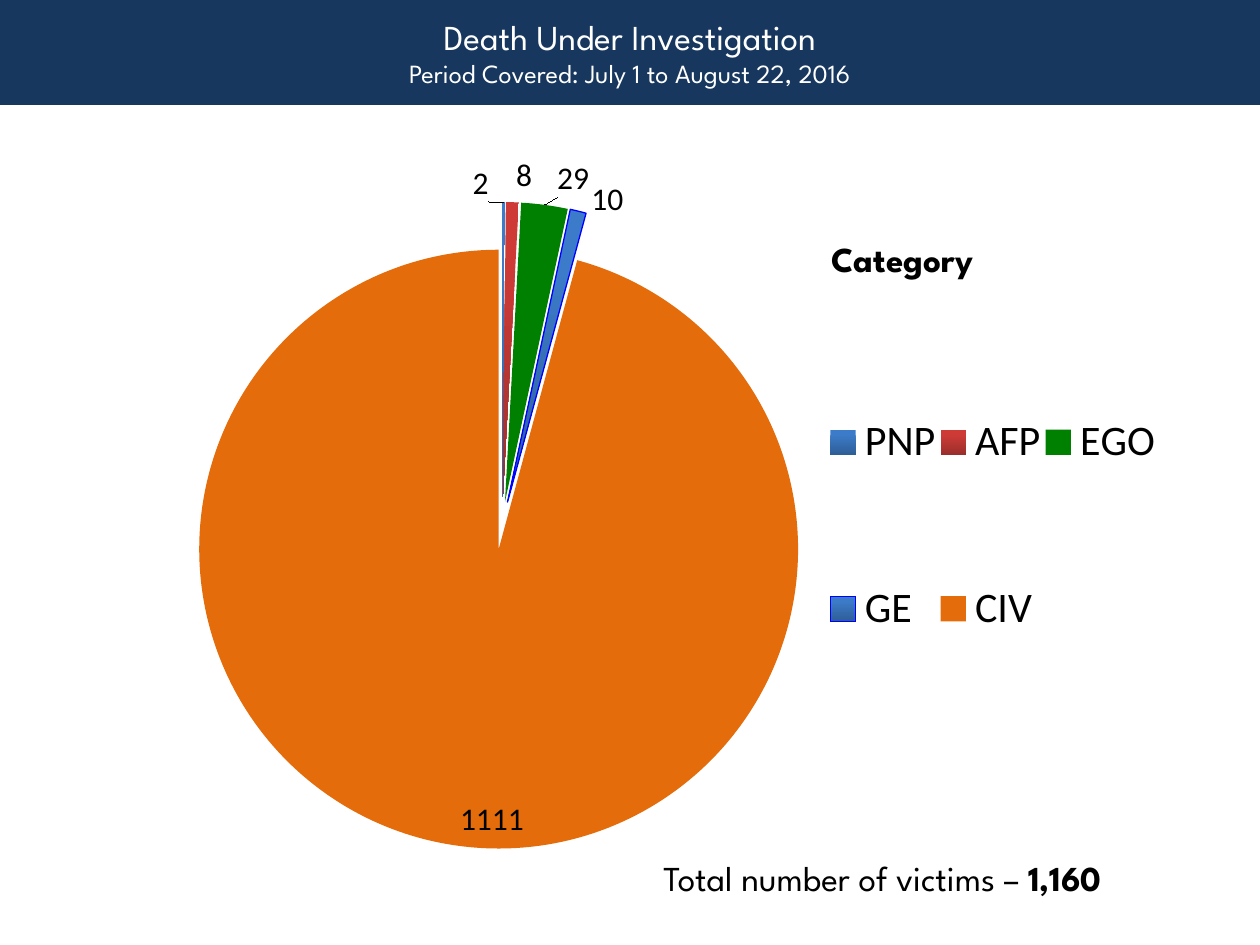
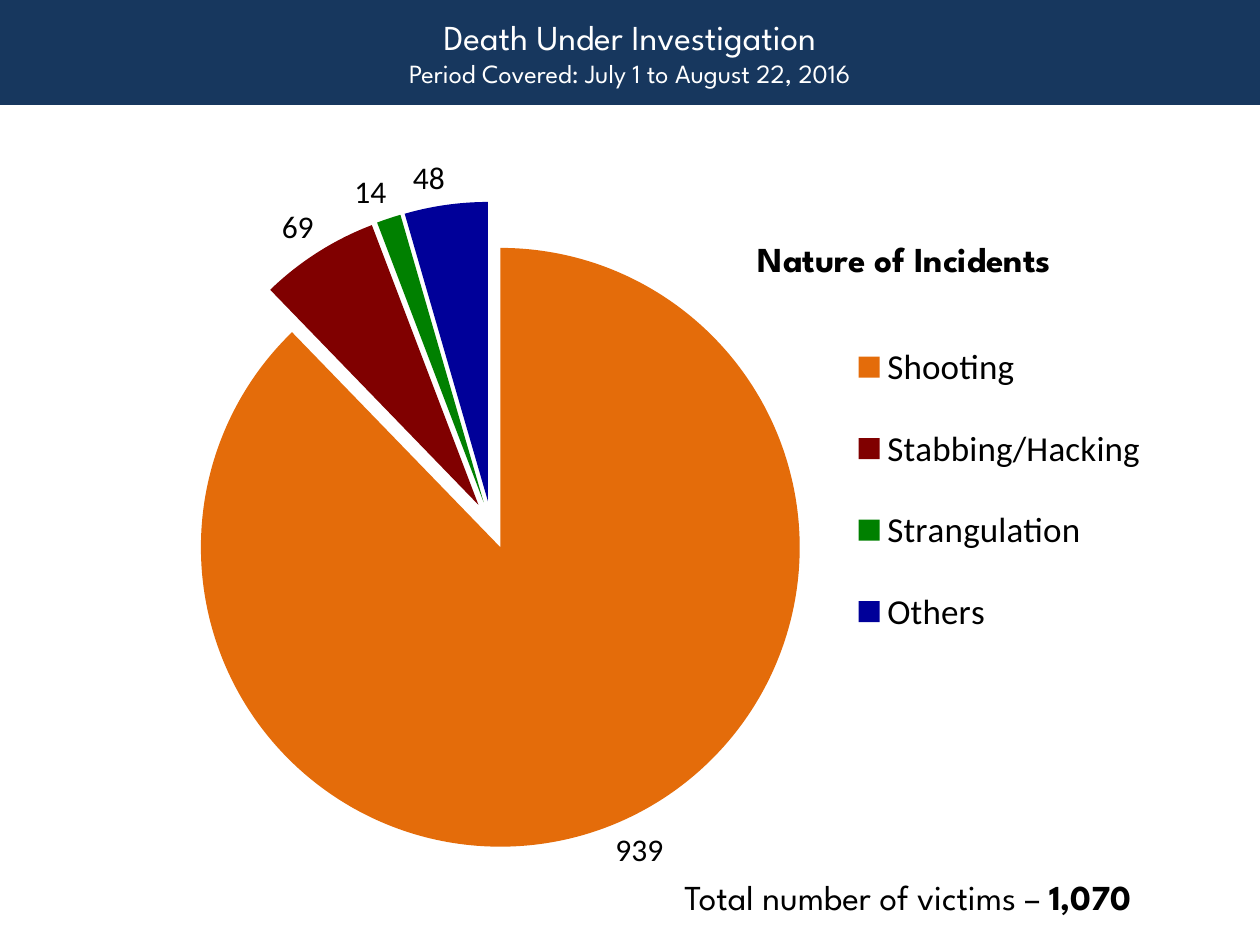
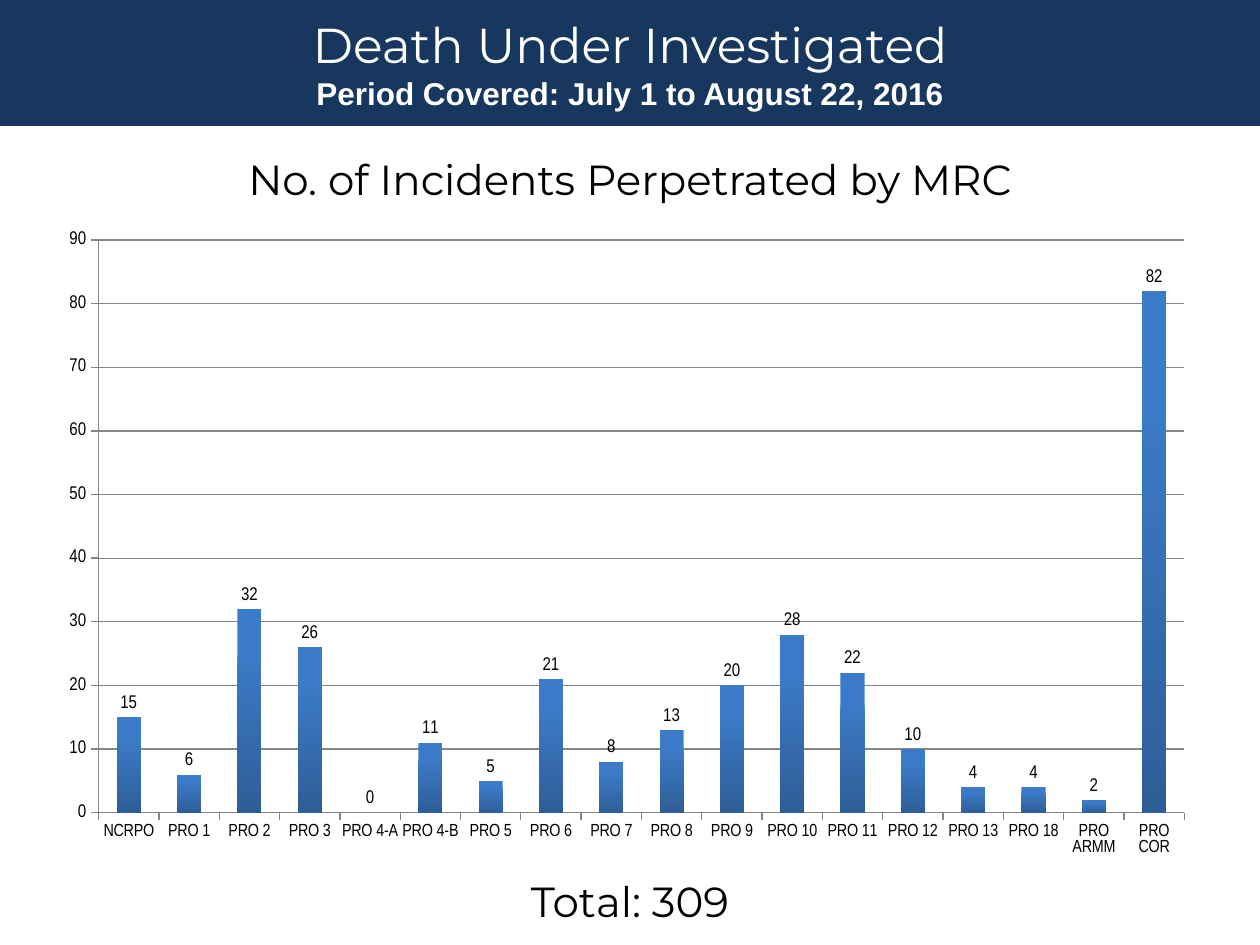
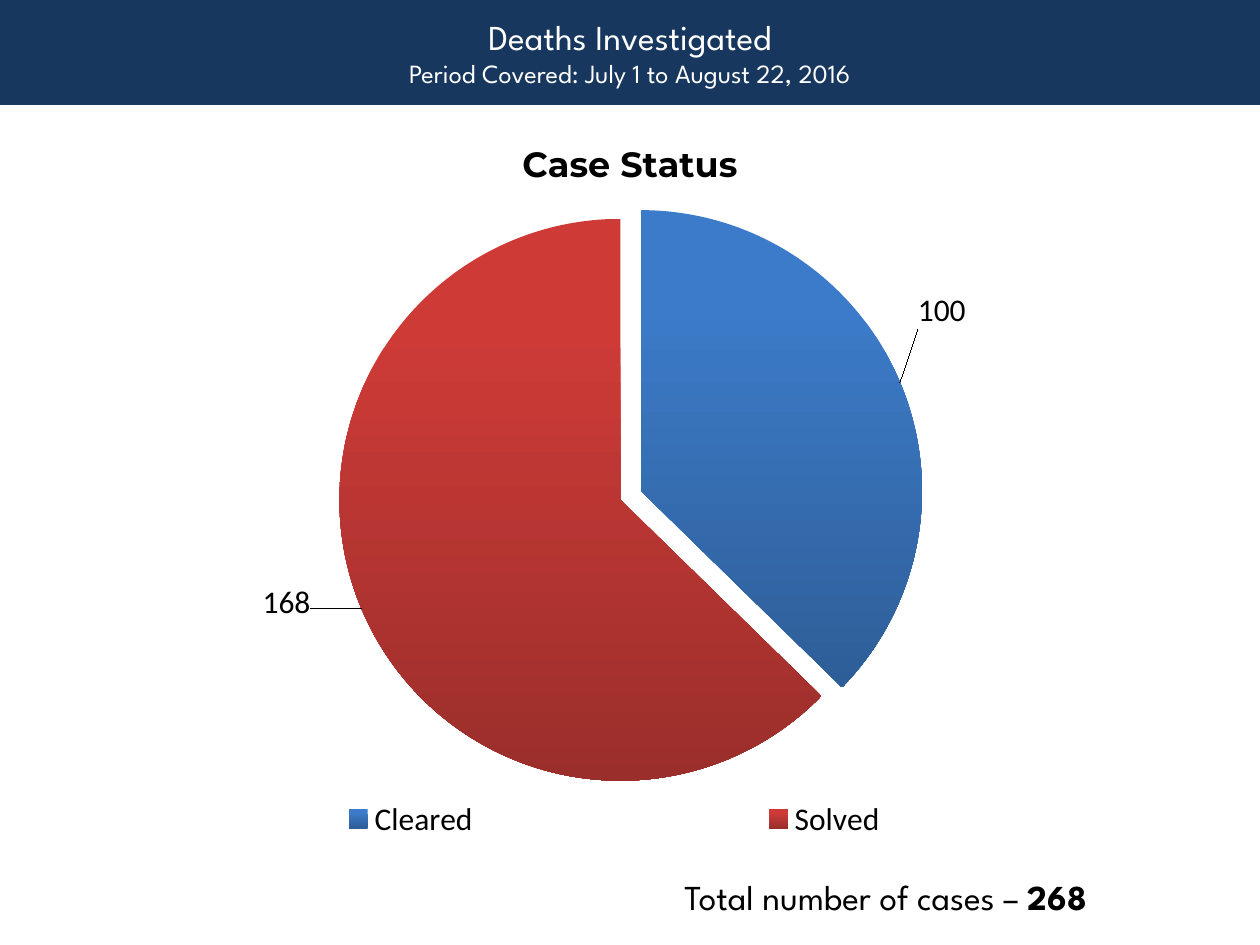
from dataclasses import dataclass
from typing import NamedTuple

from lxml import etree
from pptx import Presentation
from pptx.chart.data import CategoryChartData
from pptx.dml.color import RGBColor
from pptx.enum.chart import XL_CHART_TYPE, XL_LABEL_POSITION, XL_LEGEND_POSITION, XL_TICK_MARK
from pptx.enum.text import MSO_ANCHOR, MSO_AUTO_SIZE, PP_ALIGN
from pptx.oxml.ns import qn
from pptx.util import Inches, Pt

PIE, COLUMN = XL_CHART_TYPE.PIE, XL_CHART_TYPE.COLUMN_CLUSTERED
OUTSIDE, INSIDE = XL_LABEL_POSITION.OUTSIDE_END, XL_LABEL_POSITION.INSIDE_END
LEGEND_RIGHT = XL_LEGEND_POSITION.RIGHT
TICK_OUT = XL_TICK_MARK.OUTSIDE
LEFT, CENTER = PP_ALIGN.LEFT, PP_ALIGN.CENTER
MIDDLE = MSO_ANCHOR.MIDDLE
FIXED, GROW = MSO_AUTO_SIZE.NONE, MSO_AUTO_SIZE.SHAPE_TO_FIT_TEXT

NAVY = RGBColor(0x17, 0x37, 0x5E)
WHITE = RGBColor(0xFF, 0xFF, 0xFF)
BLACK = RGBColor(0x00, 0x00, 0x00)
GRAY = RGBColor(0x86, 0x86, 0x86)
ORANGE = RGBColor(0xE4, 0x6C, 0x0A)
GREEN = RGBColor(0x00, 0x80, 0x00)
MAROON = RGBColor(0x80, 0x00, 0x00)
INDIGO = RGBColor(0x00, 0x00, 0x99)
BRIGHT_BLUE = RGBColor(0x00, 0x00, 0xFF)

SPARTAN, MONTSERRAT = "League Spartan", "Montserrat"
ARIAL, NARROW, CALIBRI = "Arial", "Arial Narrow", "Calibri"
PERIOD = "Period Covered: July 1 to August 22, 2016"
SLIDE_WIDTH, SLIDE_HEIGHT = Inches(10), Inches(7.5)
COLUMNS, ROWS = 120, 90


class Area(NamedTuple):
    """A place on the slide grid."""

    column: float
    row: float
    columns: float
    rows: float


class Frame(NamedTuple):
    """Shares of a chart taken by one of its parts."""

    x: float
    y: float
    w: float
    h: float


class Shift(NamedTuple):
    """Shares of a chart by which a label moves."""

    x: float
    y: float


class Gradient(NamedTuple):
    """A fill running from light at the top to dark at the bottom."""

    light: RGBColor
    dark: RGBColor


BLUE_SHADE = Gradient(RGBColor(0x3C, 0x7B, 0xC9), RGBColor(0x2E, 0x5E, 0x97))
RED_SHADE = Gradient(RGBColor(0xCE, 0x3B, 0x37), RGBColor(0x9A, 0x2E, 0x2B))


@dataclass(frozen=True)
class Span:
    """A stretch of text in one format."""

    text: str
    size: float = 20
    font: str = SPARTAN
    bold: bool = False
    color: RGBColor = BLACK


@dataclass(frozen=True)
class Caption:
    """A one-line text box."""

    area: Area
    spans: tuple[Span, ...]
    align: PP_ALIGN = LEFT


@dataclass(frozen=True)
class Slice:
    """A pie slice with its value, look and label place."""

    label: str
    value: int
    fill: RGBColor | Gradient
    shift: Shift | None = None
    outline: RGBColor | None = None
    position: XL_LABEL_POSITION = OUTSIDE


@dataclass(frozen=True)
class Pie:
    """A pie chart with a placed plot and legend."""

    area: Area
    plot: Frame
    legend: Frame
    legend_size: int
    explosion: int
    slices: tuple[Slice, ...]


@dataclass(frozen=True)
class Bars:
    """A column chart with a value above each column."""

    area: Area
    plot: Frame
    values: dict[str, int]


@dataclass(frozen=True)
class Page:
    """A slide with a title band, a chart and captions."""

    band_rows: float
    title: tuple[Span, Span]
    chart: Pie | Bars
    captions: tuple[Caption, ...]


def set_format(target, **values) -> None:
    """Set each named value on the target."""
    for name, value in values.items():
        setattr(target, name, value)


def place(area: Area) -> tuple[int, int, int, int]:
    """Turn a grid area into slide lengths."""
    return (
        int(SLIDE_WIDTH * area.column / COLUMNS),
        int(SLIDE_HEIGHT * area.row / ROWS),
        int(SLIDE_WIDTH * area.columns / COLUMNS),
        int(SLIDE_HEIGHT * area.rows / ROWS),
    )


def add_span(para, span: Span) -> None:
    """Add one formatted run to a paragraph."""
    run = para.add_run()
    run.text = span.text
    set_format(run.font, name=span.font, size=Pt(span.size), bold=span.bold)
    run.font.color.rgb = span.color


def add_band(slide, rows: float, lines: tuple[Span, Span]) -> None:
    """Turn the title placeholder into the band at the top."""
    title = slide.shapes.title
    left, top, width, height = place(Area(0, 0, COLUMNS, rows))
    set_format(title, left=left, top=top, width=width, height=height)
    title.fill.solid()
    title.fill.fore_color.rgb = NAVY
    frame = title.text_frame
    set_format(frame, word_wrap=True, auto_size=FIXED, vertical_anchor=MIDDLE)
    for index, line in enumerate(lines):
        para = frame.add_paragraph() if index else frame.paragraphs[0]
        para.alignment = CENTER
        add_span(para, line)


def add_caption(slide, caption: Caption) -> None:
    """Draw a caption as a text box."""
    box = slide.shapes.add_textbox(*place(caption.area))
    set_format(box.text_frame, word_wrap=True, auto_size=GROW)
    para = box.text_frame.paragraphs[0]
    para.alignment = caption.align
    for span in caption.spans:
        add_span(para, span)


def paint(fill, paint_with: RGBColor | Gradient) -> None:
    """Fill with a plain colour or a vertical gradient."""
    if isinstance(paint_with, Gradient):
        fill.gradient()
        fill.gradient_angle = 270
        for stop, color, position in zip(fill.gradient_stops, paint_with, (0.2, 1)):
            stop.color.rgb = color
            stop.position = position
    else:
        fill.solid()
        fill.fore_color.rgb = paint_with


def make_layout(part: Frame | Shift, inner: bool = False):
    """Build the manual layout of a chart part."""
    layout = etree.Element(qn("c:layout"))
    manual = etree.SubElement(layout, qn("c:manualLayout"))
    settings = {"layoutTarget": "inner"} if inner else {}
    if isinstance(part, Frame):
        settings |= {"xMode": "edge", "yMode": "edge"}
    for name, value in (settings | part._asdict()).items():
        etree.SubElement(manual, qn(f"c:{name}"), val=str(value))
    return layout


def add_chart(slide, kind, area: Area, plot: Frame, values: dict[str, int], font: str, size: float):
    """Add a one-series chart with its plot area in place."""
    data = CategoryChartData()
    data.categories = list(values)
    data.add_series("Series 1", list(values.values()))
    chart = slide.shapes.add_chart(kind, *place(area), data).chart
    set_format(chart, has_title=False, has_legend=False)
    set_format(chart.font, name=font, size=Pt(size))
    chart.font.color.rgb = BLACK
    plot_area = chart._chartSpace.chart.plotArea
    for old_layout in plot_area.findall(qn("c:layout")):
        plot_area.remove(old_layout)
    plot_area.insert(0, make_layout(plot, inner=True))
    labels = chart.plots[0].series[0].data_labels
    set_format(labels, show_value=True, position=OUTSIDE)
    set_format(labels.font, name=font, size=Pt(size))
    return chart


def add_legend(chart, frame: Frame, size: int) -> None:
    """Show the legend in its frame."""
    chart.has_legend = True
    legend = chart.legend
    set_format(legend, position=LEGEND_RIGHT, include_in_layout=False)
    set_format(legend.font, name=CALIBRI, size=Pt(size))
    element = legend._element
    for old_layout in element.findall(qn("c:layout")):
        element.remove(old_layout)
    element.find(qn("c:legendPos")).addnext(make_layout(frame))


def add_pie(slide, pie: Pie) -> None:
    """Draw an exploded pie chart."""
    values = {part.label: part.value for part in pie.slices}
    chart = add_chart(slide, PIE, pie.area, pie.plot, values, CALIBRI, 18)
    add_legend(chart, pie.legend, pie.legend_size)
    chart.plots[0].vary_by_categories = True
    series = chart.plots[0].series[0]
    explosion = etree.Element(qn("c:explosion"), val=str(pie.explosion))
    series._element.find(qn("c:tx")).addnext(explosion)
    for index, part in enumerate(pie.slices):
        point = series.points[index]
        paint(point.format.fill, part.fill)
        if part.outline is not None:
            point.format.line.color.rgb = part.outline
            point.format.line.width = Pt(0.75)
        else:
            point.format.line.fill.background()
        if part.shift is not None or part.position != OUTSIDE:
            label = point.data_label
            label.position = part.position
            set_format(label.font, name=CALIBRI, size=Pt(18))
            if part.shift is not None:
                label._get_or_add_dLbl()[0].addnext(make_layout(part.shift))


def add_bars(slide, bars: Bars) -> None:
    """Draw a column chart with gridlines."""
    chart = add_chart(slide, COLUMN, bars.area, bars.plot, bars.values, NARROW, 10.5)
    plot = chart.plots[0]
    set_format(plot, vary_by_categories=False, gap_width=150)
    paint(plot.series[0].format.fill, BLUE_SHADE)
    set_format(chart.value_axis, minimum_scale=0, maximum_scale=90, major_unit=10, has_major_gridlines=True)
    chart.value_axis.major_gridlines.format.line.color.rgb = GRAY
    for axis, size in ((chart.category_axis, 10), (chart.value_axis, 10.5)):
        axis.major_tick_mark = TICK_OUT
        axis.format.line.color.rgb = GRAY
        set_format(axis.tick_labels.font, name=NARROW, size=Pt(size))


def spartan_title(text: str) -> tuple[Span, Span]:
    """Give the two band lines used with pie charts."""
    return Span(text, color=WHITE), Span(PERIOD, 15, color=WHITE)


def total(column: float, row: float, columns: float, counted: str, amount: str) -> Caption:
    """Give the closing line with its total in bold."""
    return Caption(
        Area(column, row, columns, 5.3),
        (Span(f"Total number of {counted} – "), Span(amount, bold=True)),
    )


def wide_line(row: float, rows: float, span: Span) -> Caption:
    """Give a centred line as wide as the slide."""
    return Caption(Area(0, row, COLUMNS, rows), (span,), CENTER)


INCIDENTS = {
    "NCRPO": 15, "PRO 1": 6, "PRO 2": 32, "PRO 3": 26, "PRO 4-A": 0, "PRO 4-B": 11,
    "PRO 5": 5, "PRO 6": 21, "PRO 7": 8, "PRO 8": 13, "PRO 9": 20, "PRO 10": 28,
    "PRO 11": 22, "PRO 12": 10, "PRO 13": 4, "PRO 18": 4, "PRO ARMM": 2, "PRO COR": 82,
}

CATEGORY_PIE = Pie(
    Area(6, 14, 110, 70), Frame(0.1, 0.03, 0.56, 0.97), Frame(0.66, 0.21, 0.29, 0.61), 24, 8,
    (
        Slice("PNP", 2, BLUE_SHADE, Shift(-0.02, 0.01)),
        Slice("AFP", 8, RED_SHADE, Shift(0.01, 0)),
        Slice("EGO", 29, GREEN, Shift(0.01, 0)),
        Slice("GE", 10, BLUE_SHADE, Shift(0.01, 0.02), BRIGHT_BLUE),
        Slice("CIV", 1111, ORANGE, position=INSIDE),
    ),
)

NATURE_PIE = Pie(
    Area(5, 15, 110, 68), Frame(0.1, 0.03, 0.56, 0.97), Frame(0.69, 0.21, 0.26, 0.51), 20, 8,
    (
        Slice("Shooting", 939, ORANGE),
        Slice("Stabbing/Hacking", 69, MAROON),
        Slice("Strangulation", 14, GREEN),
        Slice("Others", 48, INDIGO),
    ),
)

STATUS_PIE = Pie(
    Area(6, 13, 105, 67.7), Frame(0.25, 0.09, 0.53, 0.83), Frame(0, 0.92, 1, 0.08), 18, 4,
    (
        Slice("Cleared", 100, BLUE_SHADE, Shift(0.01, -0.07)),
        Slice("Solved", 168, RED_SHADE, Shift(-0.04, -0.04)),
    ),
)

PAGES = (
    Page(
        10, spartan_title("Death Under Investigation"), CATEGORY_PIE,
        (
            Caption(Area(78, 22, 40, 5.3), (Span("Category", bold=True),)),
            total(62, 81, 53, "victims", "1,160"),
        ),
    ),
    Page(
        10, spartan_title("Death Under Investigation"), NATURE_PIE,
        (
            Caption(Area(71, 22, 51, 5.3), (Span("Nature of Incidents", bold=True),)),
            total(64, 82.8, 54, "victims", "1,070"),
        ),
    ),
    Page(
        12,
        (
            Span("Death Under Investigated", 28, MONTSERRAT, color=WHITE),
            Span(PERIOD, 18, ARIAL, True, WHITE),
        ),
        Bars(Area(5, 21, 110, 62), Frame(0.04, 0.03, 0.94, 0.88), INCIDENTS),
        (
            wide_line(14, 6, Span("No. of Incidents Perpetrated by MRC", 24, MONTSERRAT)),
            wide_line(82.8, 6, Span("Total: 309", 24, MONTSERRAT)),
        ),
    ),
    Page(
        10, spartan_title("Deaths Investigated"), STATUS_PIE,
        (
            total(64, 82.8, 54, "cases", "268"),
            wide_line(13, 5.3, Span("Case Status", 20, MONTSERRAT, True)),
        ),
    ),
)


def main() -> None:
    """Build the deck and save it."""
    deck = Presentation()
    set_format(deck, slide_width=SLIDE_WIDTH, slide_height=SLIDE_HEIGHT)
    title_only = deck.slide_layouts[5]
    for page in PAGES:
        slide = deck.slides.add_slide(title_only)
        add_band(slide, page.band_rows, page.title)
        if isinstance(page.chart, Pie):
            add_pie(slide, page.chart)
        else:
            add_bars(slide, page.chart)
        for caption in page.captions:
            add_caption(slide, caption)
    deck.save("out.pptx")


if __name__ == "__main__":
    main()
